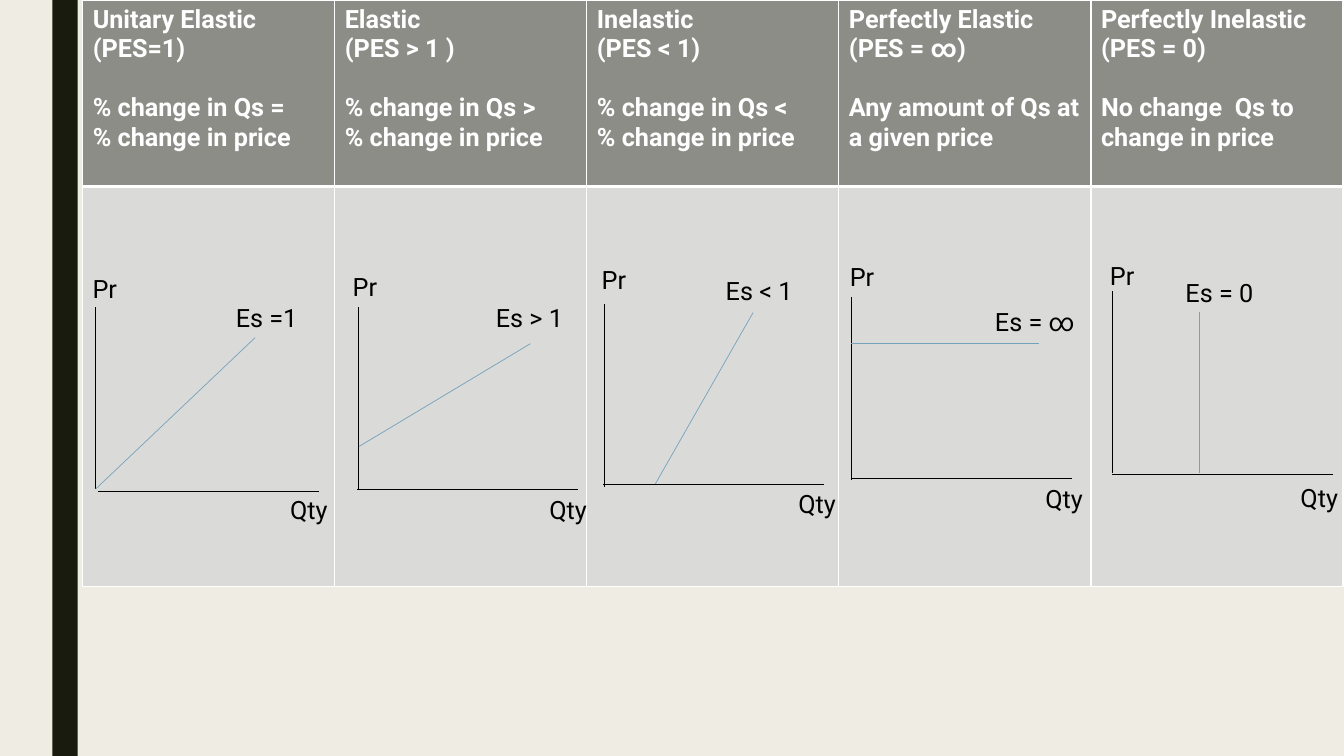
from dataclasses import dataclass

from lxml.etree import SubElement
from pptx import Presentation
from pptx.dml.color import RGBColor
from pptx.enum.shapes import MSO_CONNECTOR, MSO_SHAPE
from pptx.enum.text import MSO_AUTO_SIZE
from pptx.oxml import parse_xml
from pptx.oxml.ns import nsdecls, qn
from pptx.util import Emu, Pt

PX = 9144  # 100 px to the inch


@dataclass(frozen=True)
class Theme:
    font: str = "Roboto"
    text_size: int = 18
    gap_size: int = 21
    page: str = "EFEDE3"
    stripe: str = "191B0E"
    header: str = "8C8D86"
    body: str = "DADBD9"
    white: str = "FFFFFF"
    black: str = "000000"
    supply: str = "77A2BB"
    line_width: float = 0.5
    border: int = 1
    header_border: int = 3


@dataclass(frozen=True)
class Graph:
    """One supply curve; lines are (x1, y1, x2, y2), label spots (left, top)."""
    title: list
    rule: list
    price_axis: tuple
    quantity_axis: tuple
    curve: tuple
    price_at: tuple
    quantity_at: tuple
    label: str
    label_at: tuple


THEME = Theme()
COLUMN_WIDTH = 250
ROW_HEIGHTS = (185, 397)
TABLE_AT = (82, 0)

GRAPHS = [
    Graph(["Unitary Elastic (PES=1)"], ["% change in Qs =", "% change in price"],
          (95, 305, 95, 485), (97, 487, 316, 487), (95, 485, 253, 335),
          (82, 266), (278, 485), "Es =1", (224, 295)),
    Graph(["Elastic", "(PES > 1 )"], ["% change in Qs >", "% change in price"],
          (355, 305, 355, 485), (354, 485, 573, 485), (356, 443, 526, 341),
          (340, 264), (535, 485), "Es > 1", (482, 295)),
    Graph(["Inelastic", "(PES < 1)"], ["% change in Qs <", "% change in price"],
          (599, 302, 599, 483), (598, 481, 817, 481), (650, 480, 747, 310),
          (587, 257), (782, 479), "Es < 1", (710, 268)),
    Graph(["Perfectly Elastic", "(PES = ∞)"], ["Any amount of Qs at a given price"],
          (844, 295, 844, 476), (844, 475, 1063, 475), (844, 341, 1030, 341),
          (833, 254), (1027, 475), "Es = ∞", (977, 299)),
    Graph(["Perfectly Inelastic", "(PES = 0)"], ["No change  Qs to change in price"],
          (1103, 289, 1103, 469), (1103, 471, 1322, 471), (1190, 469, 1190, 310),
          (1091, 253), (1280, 474), "Es = 0", (1166, 270)),
]


def px(*lengths):
    return [Emu(length * PX) for length in lengths]


def color(value):
    return RGBColor.from_string(value)


def style_text(para, ink, bold=False):
    for span in para.runs:
        span.font.name = THEME.font
        span.font.size = Pt(THEME.text_size)
        span.font.bold = bold
        span.font.color.rgb = color(ink)


def add_stripe(page):
    stripe = page.shapes.add_shape(MSO_SHAPE.RECTANGLE, *px(52, 0, 25, 750))
    stripe.shadow.inherit = False
    stripe.fill.solid()
    stripe.fill.fore_color.rgb = color(THEME.stripe)
    stripe.line.fill.background()


def add_line(page, ends, ink):
    line = page.shapes.add_connector(MSO_CONNECTOR.STRAIGHT, *px(*ends))
    line.line.color.rgb = color(ink)
    line.line.width = Pt(THEME.line_width)
    SubElement(line._element.spPr, qn("a:effectLst"))


def add_label(page, text, spot, width, height=40):
    box = page.shapes.add_textbox(*px(*spot, width, height))
    frame = box.text_frame
    frame.word_wrap = True
    frame.auto_size = MSO_AUTO_SIZE.SHAPE_TO_FIT_TEXT
    frame.text = text
    style_text(frame.paragraphs[0], THEME.black)


def style_cell(cell, fill, top, bottom):
    """Fill a cell and give it white borders; top and bottom are in points."""
    cell.fill.solid()
    cell.fill.fore_color.rgb = color(fill)
    sides = {"L": THEME.border, "R": THEME.border, "T": top, "B": bottom}
    for index, (side, width) in enumerate(sides.items()):
        border = parse_xml(
            f'<a:ln{side} {nsdecls("a")} w="{Pt(width)}"><a:solidFill>'
            f'<a:srgbClr val="{THEME.white}"/></a:solidFill></a:ln{side}>')
        cell._tc.get_or_add_tcPr().insert(index, border)


def fill_header(cell, graph):
    cell.text_frame.text = "\n".join(graph.title + graph.rule)
    paras = cell.text_frame.paragraphs
    for para in paras:
        style_text(para, THEME.white, bold=True)
    paras[len(graph.title)].space_before = Pt(THEME.gap_size)


def add_elasticity_table(page):
    size = (COLUMN_WIDTH * len(GRAPHS), sum(ROW_HEIGHTS))
    table = page.shapes.add_table(2, len(GRAPHS), *px(*TABLE_AT, *size)).table
    for row, height in zip(table.rows, px(*ROW_HEIGHTS)):
        row.height = height
    for index, graph in enumerate(GRAPHS):
        table.columns[index].width = Emu(COLUMN_WIDTH * PX)
        header, body = table.cell(0, index), table.cell(1, index)
        fill_header(header, graph)
        style_cell(header, THEME.header, THEME.border, THEME.header_border)
        style_cell(body, THEME.body, THEME.header_border, THEME.border)


def add_graph(page, graph):
    add_line(page, graph.price_axis, THEME.black)
    add_line(page, graph.quantity_axis, THEME.black)
    add_line(page, graph.curve, THEME.supply)
    add_label(page, "Pr", graph.price_at, 63)
    add_label(page, "Qty", graph.quantity_at, 76, 71)
    add_label(page, graph.label, graph.label_at, 100)


def main():
    deck = Presentation()
    deck.slide_width, deck.slide_height = px(1333, 750)
    page = deck.slides.add_slide(deck.slide_layouts[6])
    page.background.fill.solid()
    page.background.fill.fore_color.rgb = color(THEME.page)
    add_stripe(page)
    add_elasticity_table(page)
    for graph in GRAPHS:
        add_graph(page, graph)
    deck.save("out.pptx")


if __name__ == "__main__":
    main()
